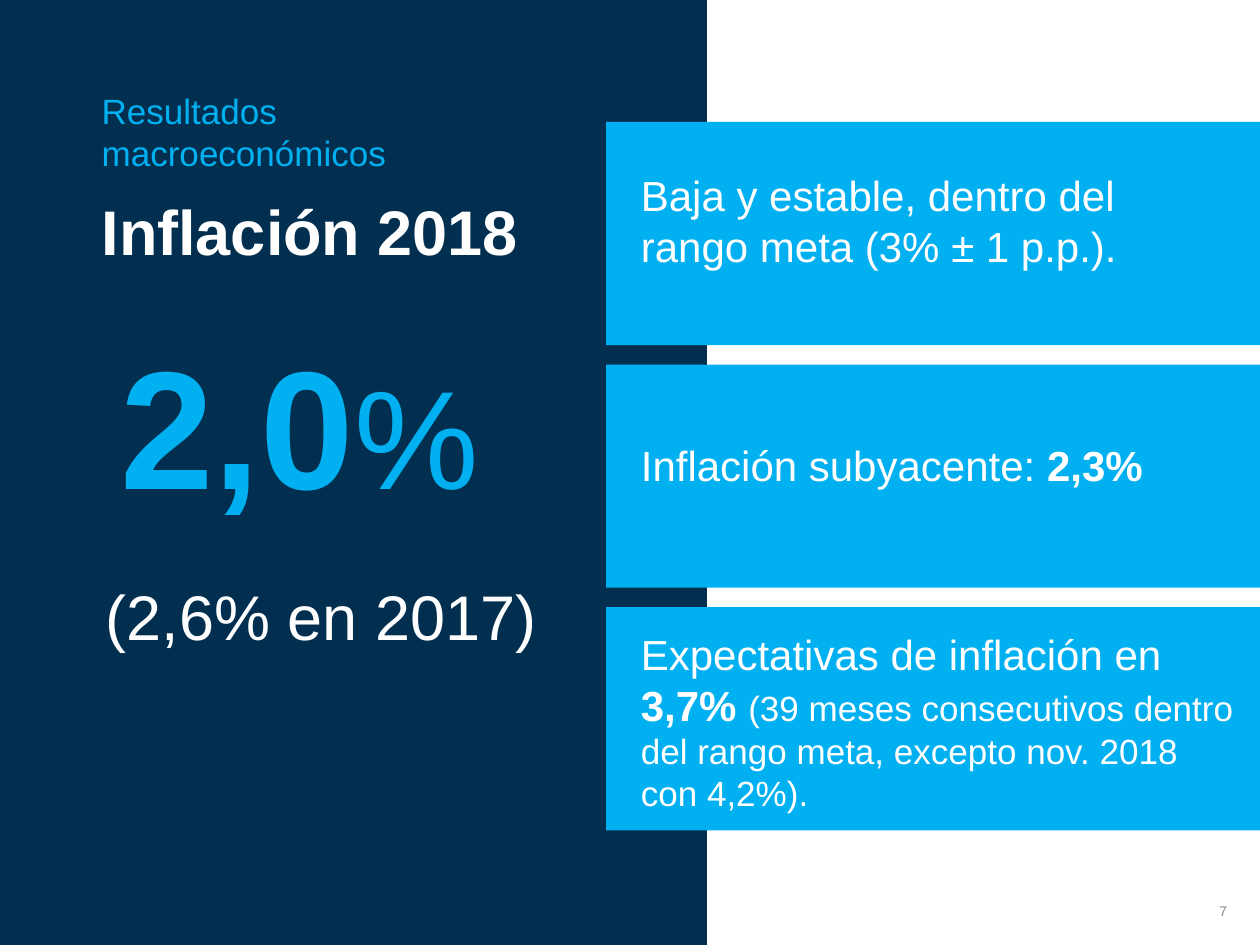
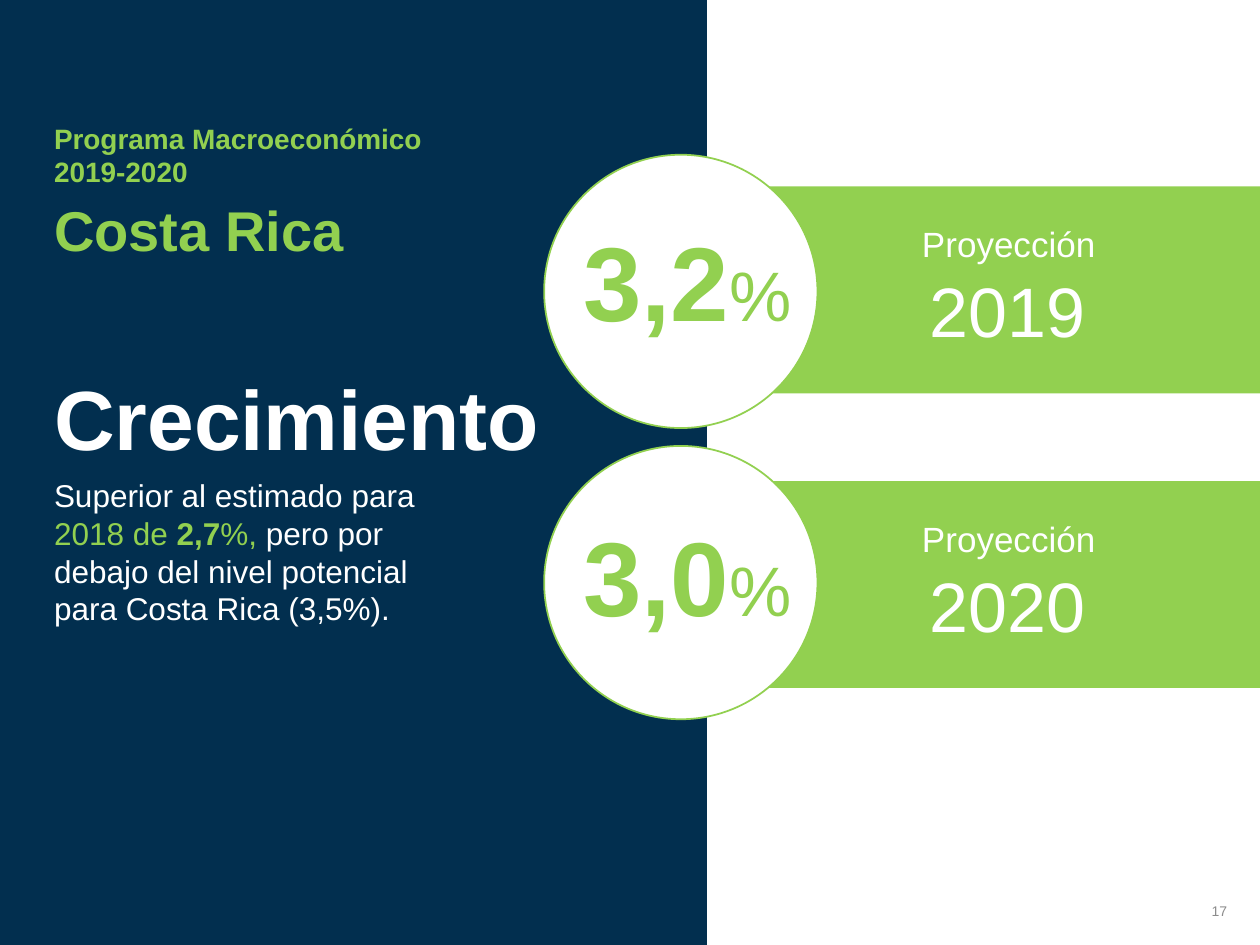
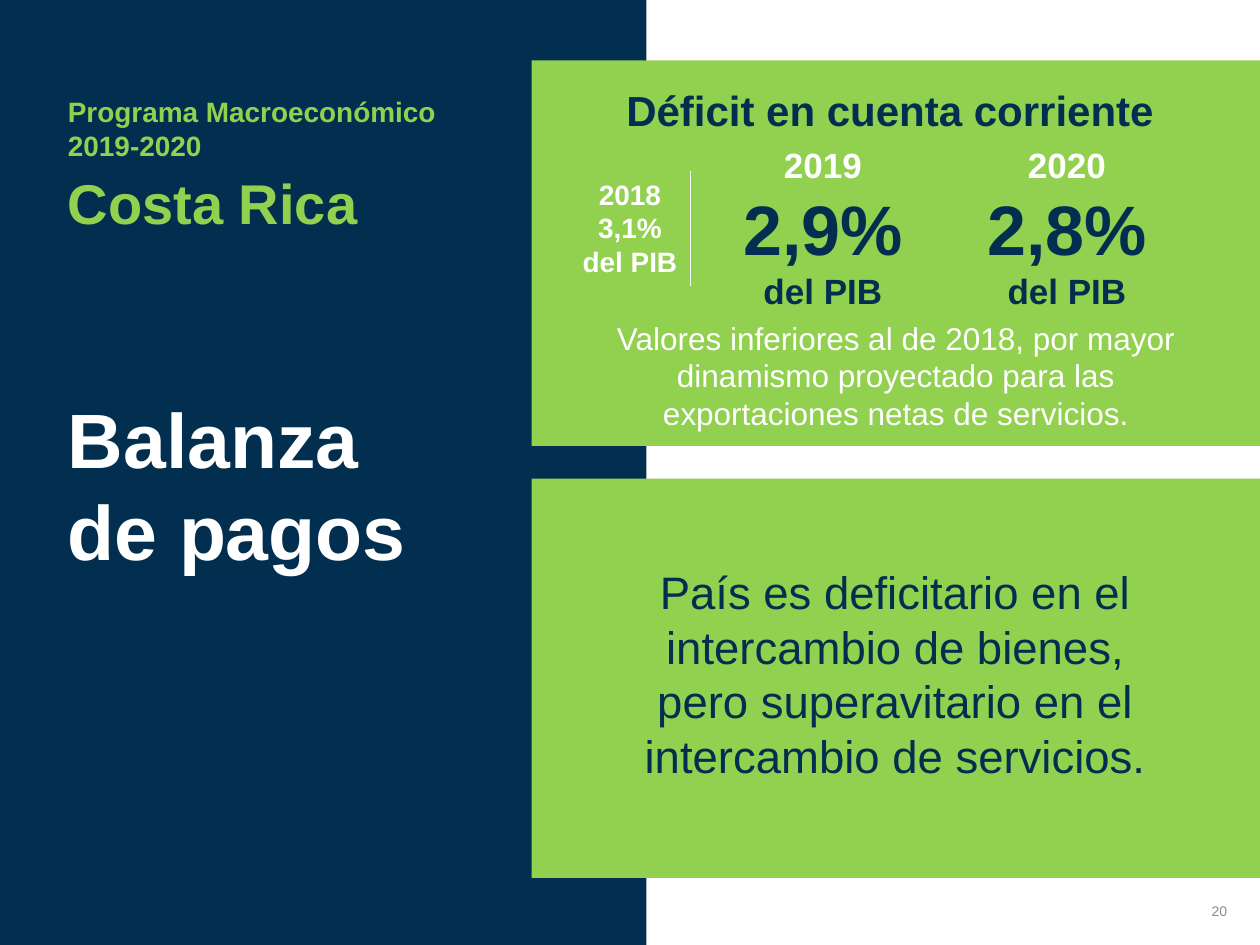
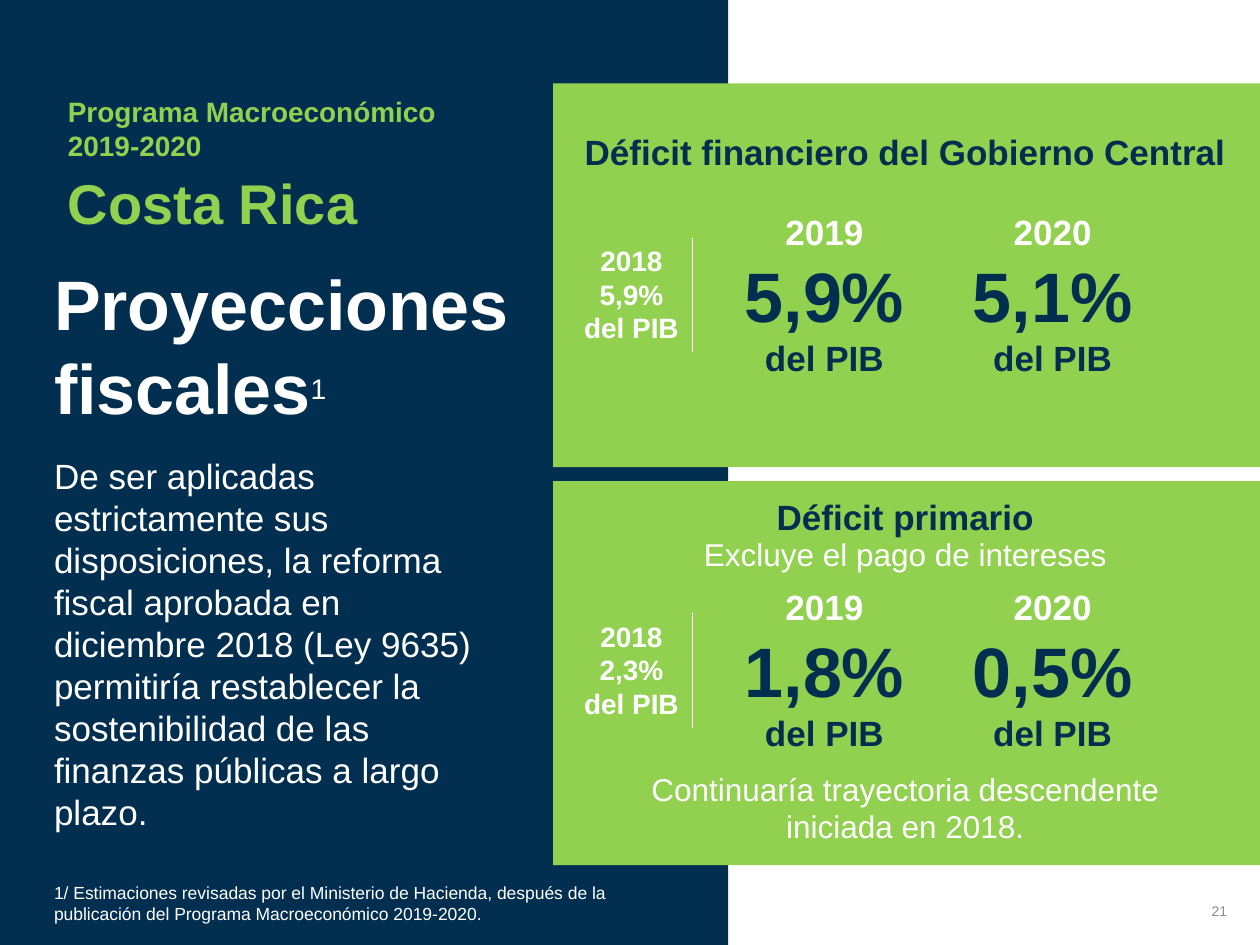
from typing import NamedTuple

from lxml.etree import SubElement
from pptx import Presentation
from pptx.dml.color import RGBColor
from pptx.enum.shapes import MSO_CONNECTOR as Connector, MSO_SHAPE as Shape
from pptx.enum.text import MSO_ANCHOR as Anchor, MSO_AUTO_SIZE as AutoSize, PP_ALIGN as Align
from pptx.oxml.ns import qn
from pptx.util import Cm, Pt

COLOURS = {
    "navy": "022F4F",
    "cyan": "00B0F0",
    "green": "92D050",
    "white": "FFFFFF",
    "grey": "8C8C8C",
}
FONT = "Arial"
PAGE_WIDTH, PAGE_HEIGHT = 25.4, 19.05
BLANK_LAYOUT = 6


class Span(NamedTuple):
    text: str
    size: int
    colour: str = "white"
    bold: bool = False
    raised: bool = False


def rgb(name):
    return RGBColor.from_string(COLOURS[name])


def lines(text, size, colour="white", bold=False):
    """One single-span paragraph for each line of text."""
    return [[Span(line, size, colour, bold)] for line in text.split("\n")]


# Basic elements; every place is (left, top, width, height) in centimetres
def add_block(page, place, fill, outline=None, kind=Shape.RECTANGLE):
    block = page.shapes.add_shape(kind, *map(Cm, place))
    block.shadow.inherit = False
    block.fill.solid()
    block.fill.fore_color.rgb = rgb(fill)
    if outline:
        block.line.color.rgb = rgb(outline)
        block.line.width = Pt(1)
    else:
        block.line.fill.background()


def add_panel(page, left, top, height, fill):
    """A band that runs to the right edge of the page."""
    add_block(page, (left, top, PAGE_WIDTH - left, height), fill)


def add_text(page, place, paragraphs, align=Align.LEFT, wrap=True):
    box = page.shapes.add_textbox(*map(Cm, place))
    frame = box.text_frame
    frame.word_wrap = wrap
    frame.auto_size = AutoSize.SHAPE_TO_FIT_TEXT
    for index, spans in enumerate(paragraphs):
        para = frame.add_paragraph() if index else frame.paragraphs[0]
        para.alignment = align
        for span in spans:
            run = para.add_run()
            run.text = span.text
            run.font.name = FONT
            run.font.size = Pt(span.size)
            run.font.bold = span.bold
            run.font.color.rgb = rgb(span.colour)
            if span.raised:
                run._r.get_or_add_rPr().set("baseline", "30000")
    return box


def add_divider(page, left, top, height):
    ends = map(Cm, (left, top, left, top + height))
    divider = page.shapes.add_connector(Connector.STRAIGHT, *ends)
    divider.line.color.rgb = rgb("white")
    divider.line.width = Pt(0.5)
    SubElement(divider._element.spPr, qn("a:effectLst"))


# Parts shared by the slides
def add_page(deck, number, sidebar_width):
    page = deck.slides.add_slide(deck.slide_layouts[BLANK_LAYOUT])
    add_block(page, (0, 0, sidebar_width, PAGE_HEIGHT), "navy")
    box = add_text(page, (17.93, 17.86, 7.06, 1.02), lines(str(number), 8, "grey"), Align.RIGHT)
    box.text_frame.auto_size = AutoSize.NONE
    box.text_frame.vertical_anchor = Anchor.MIDDLE
    return page


def add_programme_heading(page, left, top, width=12.45):
    add_text(page, (left, top, 8.03, 1.63),
             lines("Programa Macroeconómico\n2019-2020", 16, "green", True), wrap=False)
    add_text(page, (left, top + 1.5, width, 1.63), lines("Costa Rica", 32, "green", True))


def add_deficit_row(page, left, top, column_step, reference, projections):
    """The 2018 value, a divider, and one column for each projected year."""
    reference_top, reference_width, reference_height = top + 0.68, 2.44, 2.31
    add_text(page, (left, reference_top, reference_width, reference_height),
             lines(f"2018\n{reference}\ndel PIB", 16, bold=True), Align.CENTER, wrap=False)
    add_divider(page, left + reference_width, reference_top, reference_height)
    for index, (year, value) in enumerate(projections.items()):
        column = [[Span(year, 20, "white", True)],
                  [Span(value, 40, "navy", True)],
                  [Span("del PIB", 20, "navy", True)]]
        add_text(page, (left + 3.23 + index * column_step, top, 3.76, 3.68),
                 column, Align.CENTER, wrap=False)


# Slides
def build_inflation(deck):
    page = add_page(deck, 7, 14.25)
    add_text(page, (1.8, 1.68, 13.92, 1.96), lines("Resultados\nmacroeconómicos", 20, "cyan"))
    add_text(page, (1.8, 3.76, 11, 1.8), lines("Inflación 2018", 36, bold=True))
    add_text(page, (2.18, 6.35, 10.39, 4.37),
             [[Span("2,0", 96, "cyan", True), Span("%", 80, "cyan")]])
    add_text(page, (1.88, 11.51, 9.55, 1.8), lines("(2,6% en 2017)", 36))

    # Three findings
    for index in range(3):
        add_panel(page, 12.22, 2.46 + index * 4.89, 4.5, "cyan")
    text_left = 12.67
    add_text(page, (text_left, 3.3, 11.28, 2.31),
             lines("Baja y estable, dentro del rango meta (3% ± 1 p.p.).", 24))
    add_text(page, (text_left, 8.74, 10.74, 1.27),
             [[Span("Inflación subyacente: ", 24), Span("2,3%", 24, bold=True)]], wrap=False)
    add_text(page, (text_left, 12.55, 12.52, 4.01),
             [[Span("Expectativas de inflación en ", 24),
               Span("3,7% ", 24, bold=True),
               Span("(39 meses consecutivos dentro del rango meta, "
                    "excepto nov. 2018 con 4,2%).", 20)]])


def build_growth(deck):
    page = add_page(deck, 17, 14.25)
    add_programme_heading(page, 0.84, 2.32)
    add_text(page, (0.84, 7.26, 10.41, 2.31), lines("Crecimiento", 48, bold=True))
    add_text(page, (0.84, 9.47, 9.07, 4.11),
             [[Span("Superior al estimado para ", 18),
               Span("2018 de ", 18, "green"),
               Span("2,7", 18, "green", True),
               Span("%, ", 18, "green"),
               Span("pero por debajo del nivel potencial para Costa Rica (3,5%).", 18)]])

    # A band and a circle for each projected year
    projections = [("2019", "3,2", 13.23, 3.76, 3.12), ("2020", "3,0", 13.59, 9.7, 8.99)]
    for year, value, band_left, band_top, circle_top in projections:
        add_panel(page, band_left, band_top, 4.17, "green")
        add_block(page, (10.97, circle_top, 5.51, 5.51), "white", "green", Shape.OVAL)
        add_text(page, (11.51, band_top + 0.48, 4.75, 2.82),
                 [[Span(value, 60, "green", True), Span("%", 40, "green")]], wrap=False)
        add_text(page, (18.06, band_top + 0.6, 4.55, 1.12), lines("Proyección", 20), Align.CENTER)
        add_text(page, (18.47, band_top + 1.51, 3.68, 1.96), lines(year, 40), Align.CENTER)


def build_balance(deck):
    page = add_page(deck, 20, 13.03)
    add_programme_heading(page, 1.12, 1.78)
    add_text(page, (1.12, 7.77, 7.95, 4.01), lines("Balanza de pagos", 44, bold=True))

    # Current account deficit
    panel_left = 10.72
    add_panel(page, panel_left, 1.22, 7.77, "green")
    add_text(page, (12.32, 1.57, 11.48, 1.27),
             lines("Déficit en cuenta corriente ", 24, "navy", True), Align.CENTER, wrap=False)
    add_deficit_row(page, 11.48, 2.77, 4.92, "3,1%", {"2019": "2,9%", "2020": "2,8%"})
    add_text(page, (panel_left, 6.3, 14.68, 3.33),
             lines("Valores inferiores al de 2018, por mayor dinamismo proyectado para las\n"
                   "exportaciones netas de servicios.", 18), Align.CENTER)

    # Goods and services
    add_panel(page, panel_left, 9.65, 8.05, "green")
    add_text(page, (12.65, 11.25, 10.8, 4.7),
             lines("País es deficitario en el intercambio de bienes, pero superavitario "
                   "en el intercambio de servicios.", 26, "navy"), Align.CENTER)


def build_fiscal(deck):
    page = add_page(deck, 21, 14.68)
    add_programme_heading(page, 1.12, 1.78, 8.38)
    add_text(page, (0.84, 5.13, 9.86, 3.68),
             [[Span("Proyecciones fiscales", 40, bold=True), Span("1", 28, raised=True)]])
    add_text(page, (0.84, 9.04, 9.25, 8.81),
             lines("De ser aplicadas estrictamente sus disposiciones, la reforma fiscal "
                   "aprobada en diciembre 2018 (Ley 9635) permitiría restablecer la "
                   "sostenibilidad de las finanzas públicas a largo plazo.", 20))
    add_text(page, (0.84, 17.65, 13.28, 1.12),
             lines("1/ Estimaciones revisadas por el Ministerio de Hacienda, después de la\n"
                   "publicación del Programa Macroeconómico 2019-2020.", 10))

    # Financial deficit above, primary deficit below
    panel_left, text_width = 11.15, 14.2
    deficits = [
        (1.68, 2.51, "Déficit financiero del Gobierno Central", 4.11, "5,9%", "5,9%", "5,1%"),
        (9.7, 9.86, "Déficit primario", 11.68, "2,3%", "1,8%", "0,5%"),
    ]
    for panel_top, title_top, title, row_top, reference, first, second in deficits:
        add_panel(page, panel_left, panel_top, 7.74, "green")
        add_text(page, (panel_left, title_top, text_width, 1.12),
                 lines(title, 20, "navy", True), Align.CENTER)
        add_deficit_row(page, 11.51, row_top, 4.6, reference, {"2019": first, "2020": second})
    add_text(page, (panel_left, 10.67, text_width, 1.02),
             lines("Excluye el pago de intereses", 18), Align.CENTER)
    add_text(page, (panel_left, 15.39, text_width, 1.8),
             lines("Continuaría trayectoria descendente\niniciada en 2018.", 18), Align.CENTER)


def main():
    deck = Presentation()
    deck.slide_width, deck.slide_height = Cm(PAGE_WIDTH), Cm(PAGE_HEIGHT)
    for build in (build_inflation, build_growth, build_balance, build_fiscal):
        build(deck)
    deck.save("out.pptx")


if __name__ == "__main__":
    main()
